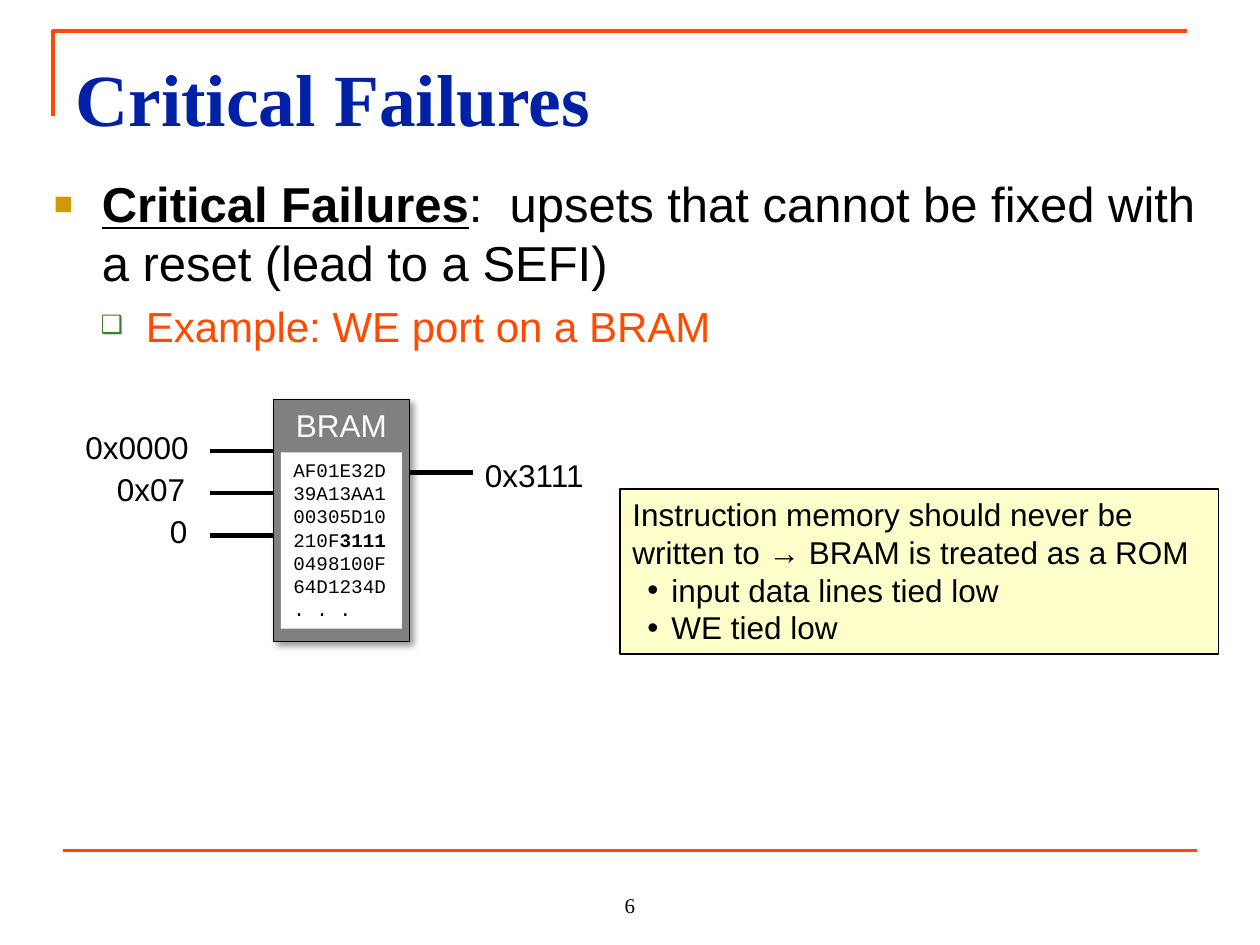
from lxml.etree import SubElement
from pptx import Presentation
from pptx.dml.color import RGBColor
from pptx.enum.shapes import MSO_CONNECTOR as CONN, MSO_SHAPE as SHAPE
from pptx.enum.text import MSO_ANCHOR as ANCHOR, PP_ALIGN as ALIGN
from pptx.oxml.ns import qn
from pptx.util import Inches, Pt

ORANGE = RGBColor(0xFF, 0x4A, 0x00)
BLUE = RGBColor(0x00, 0x21, 0xA5)
BLACK = RGBColor(0, 0, 0)
WHITE = RGBColor(0xFF, 0xFF, 0xFF)
GRAY = RGBColor(0x80, 0x80, 0x80)
CREAM = RGBColor(0xFF, 0xFF, 0xCC)
GOLD = RGBColor(0xCC, 0x99, 0x00)
GREEN = RGBColor(0x3B, 0x81, 0x2F)

# A paragraph is a list of (text, format) runs.
TITLE = [[("Critical Failures", {"bold": True})]]
DEFINITION = [
    [("Critical Failures", {"bold": True, "underline": True}),
     (":  upsets that cannot be fixed with a reset (lead to a SEFI)", {})],
    [("Example: WE port on a BRAM", {"size": 24, "color": ORANGE})],
]
DEFINITION_BULLETS = {
    0: dict(char="■", left=0.38, hang=0.38, color=GOLD, percent=65),
    1: dict(char="❑", left=0.73, hang=0.36, color=GREEN, percent=60, level=1),
}
MEMORY = [[(word, {})] for word in ("AF01E32D", "39A13AA1", "00305D10")]
MEMORY += [[("210F", {}), ("3111", {"bold": True})]]
MEMORY += [[(word, {})] for word in ("0498100F", "64D1234D", ". . .")]
NOTE = [[(text, {})] for text in (
    "Instruction memory should never be written to → BRAM is treated as a ROM",
    "input data lines tied low",
    "WE tied low",
)]
NOTE_BULLETS = {i: dict(char="•", left=0.31, hang=0.19) for i in (1, 2)}
INPUTS = [("0x0000", 0.58, 1.08), ("0x07", 0.83, 0.85), ("0", 1.25, 0.42)]
OUTPUT = "0x3111"

BRAM_LEFT, BRAM_TOP, BRAM_W, BRAM_H = 2.17, 3.17, 1.08, 1.92
WIRE = 0.5
FIRST_WIRE_Y, WIRE_STEP = 3.58, 0.335


def add_bullet(p, char, left, hang, color=None, percent=None, level=0):
    p.level = level
    pPr = p._p.get_or_add_pPr()
    pPr.set("marL", str(Inches(left)))
    pPr.set("indent", str(-Inches(hang)))
    if color is not None:
        SubElement(SubElement(pPr, qn("a:buClr")), qn("a:srgbClr"), val=str(color))
    if percent:
        SubElement(pPr, qn("a:buSzPct"), val=str(percent * 1000))
    SubElement(pPr, qn("a:buFont"), typeface="Arial")
    SubElement(pPr, qn("a:buChar"), char=char)


def write(sp, paragraphs, size=18, font="Arial", color=BLACK, align=ALIGN.LEFT,
          anchor=ANCHOR.TOP, bullets=None, before=0, top=0.05):
    tf = sp.text_frame
    tf.word_wrap = True
    tf.vertical_anchor = anchor
    tf.margin_top = Inches(top)
    for i, runs in enumerate(paragraphs):
        p = tf.paragraphs[0] if i == 0 else tf.add_paragraph()
        p.alignment = align
        if i and before:
            p.space_before = Pt(before)
        if bullets and i in bullets:
            add_bullet(p, **bullets[i])
        for text, fmt in runs:
            r = p.add_run()
            r.text = text
            r.font.name = font
            r.font.size = Pt(fmt.get("size", size))
            r.font.color.rgb = fmt.get("color", color)
            r.font.bold = fmt.get("bold", False)
            r.font.underline = fmt.get("underline", False)


def add_text(s, box, paragraphs, **fmt):
    write(s.shapes.add_textbox(*map(Inches, box)), paragraphs, **fmt)


def add_box(s, box, fill, paragraphs, outlined=True, **fmt):
    sp = s.shapes.add_shape(SHAPE.RECTANGLE, *map(Inches, box))
    sp.shadow.inherit = False
    sp.fill.solid()
    sp.fill.fore_color.rgb = fill
    if outlined:
        sp.line.color.rgb = BLACK
        sp.line.width = Pt(0.75)
    else:
        sp.line.fill.background()
    write(sp, paragraphs, **fmt)
    return sp


def add_shadow(sp):
    effects = sp._element.spPr.find(qn("a:effectLst"))
    shadow = SubElement(effects, qn("a:outerShdw"), blurRad=str(Pt(4)),
                        dist=str(Pt(3)), dir=str(45 * 60000), rotWithShape="0")
    tint = SubElement(shadow, qn("a:srgbClr"), val=str(BLACK))
    SubElement(tint, qn("a:alpha"), val="40000")


def add_line(s, x1, y1, x2, y2, color=BLACK, width=2.5):
    line = s.shapes.add_connector(CONN.STRAIGHT, *map(Inches, (x1, y1, x2, y2)))
    line.line.color.rgb = color
    line.line.width = Pt(width)
    SubElement(line._element.spPr, qn("a:effectLst"))


def add_frame(s):
    builder = s.shapes.build_freeform(Inches(0.42), Inches(0.92))
    builder.add_line_segments(
        [(Inches(0.42), Inches(0.25)), (Inches(9.42), Inches(0.25))], close=False)
    corner = builder.convert_to_shape()
    corner.shadow.inherit = False
    corner.fill.background()
    corner.line.color.rgb = ORANGE
    corner.line.width = Pt(2.25)
    add_line(s, 0.5, 6.75, 9.5, 6.75, ORANGE, 2.25)


def add_bram(s):
    body = add_box(s, (BRAM_LEFT, BRAM_TOP, BRAM_W, BRAM_H), GRAY,
                   [[("BRAM", {})]], color=WHITE, align=ALIGN.CENTER)
    add_shadow(body)
    for i, (label, left, width) in enumerate(INPUTS):
        y = FIRST_WIRE_Y + i * WIRE_STEP
        add_line(s, BRAM_LEFT, y, BRAM_LEFT - WIRE, y)
        add_text(s, (left, y - 0.235, width, 0.4), [[(label, {})]])
    right = BRAM_LEFT + BRAM_W
    add_line(s, right + WIRE, 3.75, right, 3.75)
    add_text(s, (right + WIRE, 3.57, 1.25, 0.4), [[(OUTPUT, {})]])
    add_box(s, (2.23, 3.59, 0.96, 1.4), WHITE, MEMORY, outlined=False,
            size=11, font="Courier New")


def main():
    prs = Presentation()
    prs.slide_width, prs.slide_height = Inches(10), Inches(7.5)
    s = prs.slides.add_slide(prs.slide_layouts[6])
    add_frame(s)
    add_text(s, (0.5, 0.3, 9.25, 1.03), TITLE, size=42, font="Times New Roman",
             color=BLUE, top=0.12)
    add_text(s, (0.33, 1.33, 9.33, 1.33), DEFINITION, size=28,
             bullets=DEFINITION_BULLETS, before=5)
    add_text(s, (4, 6.83, 2, 0.5), [[("6", {})]], size=12, font="Times New Roman",
             align=ALIGN.CENTER, anchor=ANCHOR.BOTTOM)
    add_bram(s)
    add_box(s, (4.92, 3.88, 4.75, 1.31), CREAM, NOTE, bullets=NOTE_BULLETS)
    prs.save("out.pptx")


if __name__ == "__main__":
    main()
